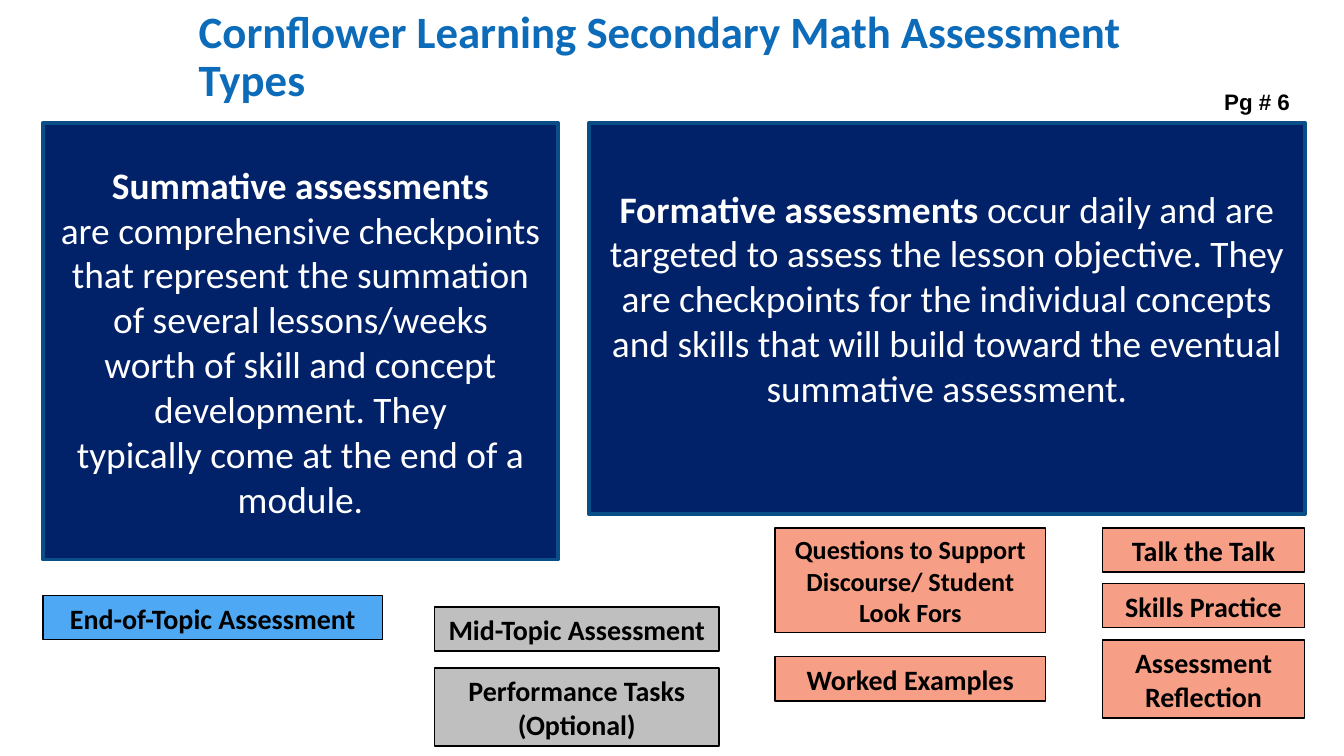
import pptx
import pptx.dml.color
import pptx.enum.shapes
import pptx.enum.text
import pptx.util

Pt = pptx.util.Pt
ALIGN = pptx.enum.text.PP_ALIGN
ANCHOR = pptx.enum.text.MSO_ANCHOR
NO_BREAK_SPACE = chr(160)

COLORS = {
    "title": "0D6CB9",
    "panel": "012169",
    "panel_line": "094E87",
    "summative": "4EA8F3",
    "optional": "BFBFBF",
    "formative": "F69E86",
    "black": "000000",
    "white": "FFFFFF",
}

# Assessment tags: text, colour, left, top, width, height, font size
TAGS = [
    ("End-of-Topic Assessment", "summative", 23, 319, 182, 23.7, 15),
    ("Mid-Topic Assessment", "optional", 232.7, 325.2, 152.6, 23.7, 15),
    ("Performance Tasks (Optional)", "optional", 232.7, 357.8, 152.6, 41.8, 15),
    ("Questions to Support Discourse/ Student Look Fors", "formative",
     415.2, 282.8, 145, 56.2, 14),
    ("Worked Examples", "formative", 415.2, 351.8, 145, 23.7, 15),
    ("Talk the Talk", "formative", 590.6, 282.8, 108.4, 23.7, 15),
    ("Skills Practice", "formative", 590.6, 312.7, 108.4, 23.7, 15),
    ("Assessment Reflection", "formative", 590.6, 342.8, 108.4, 41.8, 15),
]


def rgb(name):
    return pptx.dml.color.RGBColor.from_string(COLORS[name])


def set_frame(shape, anchor, side=5, end=3):
    frame = shape.text_frame
    frame.word_wrap = True
    frame.vertical_anchor = anchor
    frame.margin_left = frame.margin_right = Pt(side)
    frame.margin_top = frame.margin_bottom = Pt(end)
    return frame


def write_runs(paragraph, parts, size, color, align, font="Calibri"):
    """Fill a paragraph from (text, bold) pairs; ~ ties two words together."""
    paragraph.alignment = align
    for text, bold in parts:
        run = paragraph.add_run()
        run.text = text.replace("~", NO_BREAK_SPACE)
        run.font.name = font
        run.font.size = Pt(size)
        run.font.bold = bold
        run.font.color.rgb = rgb(color)


def add_box(slide, box, fill, line, line_width):
    shape = slide.shapes.add_shape(
        pptx.enum.shapes.MSO_SHAPE.RECTANGLE, *map(Pt, box))
    shape.shadow.inherit = False
    shape.fill.solid()
    shape.fill.fore_color.rgb = rgb(fill)
    shape.line.color.rgb = rgb(line)
    shape.line.width = Pt(line_width)
    return shape


def add_panel(slide, box, heading, body):
    shape = add_box(slide, box, "panel", "panel_line", 2)
    frame = set_frame(shape, ANCHOR.MIDDLE)
    write_runs(frame.paragraphs[0], [(heading, True), (body, False)],
               20, "white", ALIGN.CENTER)
    return frame


def add_tag(slide, text, fill, left, top, width, height, size):
    shape = add_box(slide, (left, top, width, height), fill, "black", 0.75)
    frame = set_frame(shape, ANCHOR.TOP)
    write_runs(frame.paragraphs[0], [(text, True)], size, "black", ALIGN.CENTER)


def add_label(slide, box, text, size, color, font, anchor, side, end):
    shape = slide.shapes.add_textbox(*map(Pt, box))
    frame = set_frame(shape, anchor, side, end)
    write_runs(frame.paragraphs[0], [(text, True)], size, color, ALIGN.LEFT, font)
    return frame


def main():
    presentation = pptx.Presentation()
    presentation.slide_width = Pt(720)
    presentation.slide_height = Pt(405)
    slide = presentation.slides.add_slide(presentation.slide_layouts[6])

    # Title and page reference
    title = add_label(slide, (101.5, 11.5, 535, 39),
                      "Cornflower Learning Secondary Math Assessment Types",
                      24, "title", "Calibri", ANCHOR.MIDDLE, 5, 3)
    title.paragraphs[0].line_spacing = 0.9
    add_label(slide, (648.7, 43.5, 57.6, 21.6), "Pg # 6",
              12, "black", "Arial", ANCHOR.TOP, 7.2, 3.6)

    # Definitions
    add_panel(slide, (23, 65.8, 276, 234), "Summative assessments",
              " are~comprehensive~checkpoints that~represent the summation of "
              "several~lessons/weeks worth~of skill and~concept development. "
              "They typically~come at the end of a module.")
    formative = add_panel(
        slide, (315.4, 65.8, 383.8, 209.5), "Formative assessments ",
        "occur daily~and~are targeted to assess the~lesson~objective. "
        "They are~checkpoints for the individual~concepts and~skills that "
        "will build~toward the eventual summative~assessment.")
    formative.margin_bottom = Pt(25)

    # Assessment types
    for tag in TAGS:
        add_tag(slide, *tag)

    presentation.save("out.pptx")


if __name__ == "__main__":
    main()
